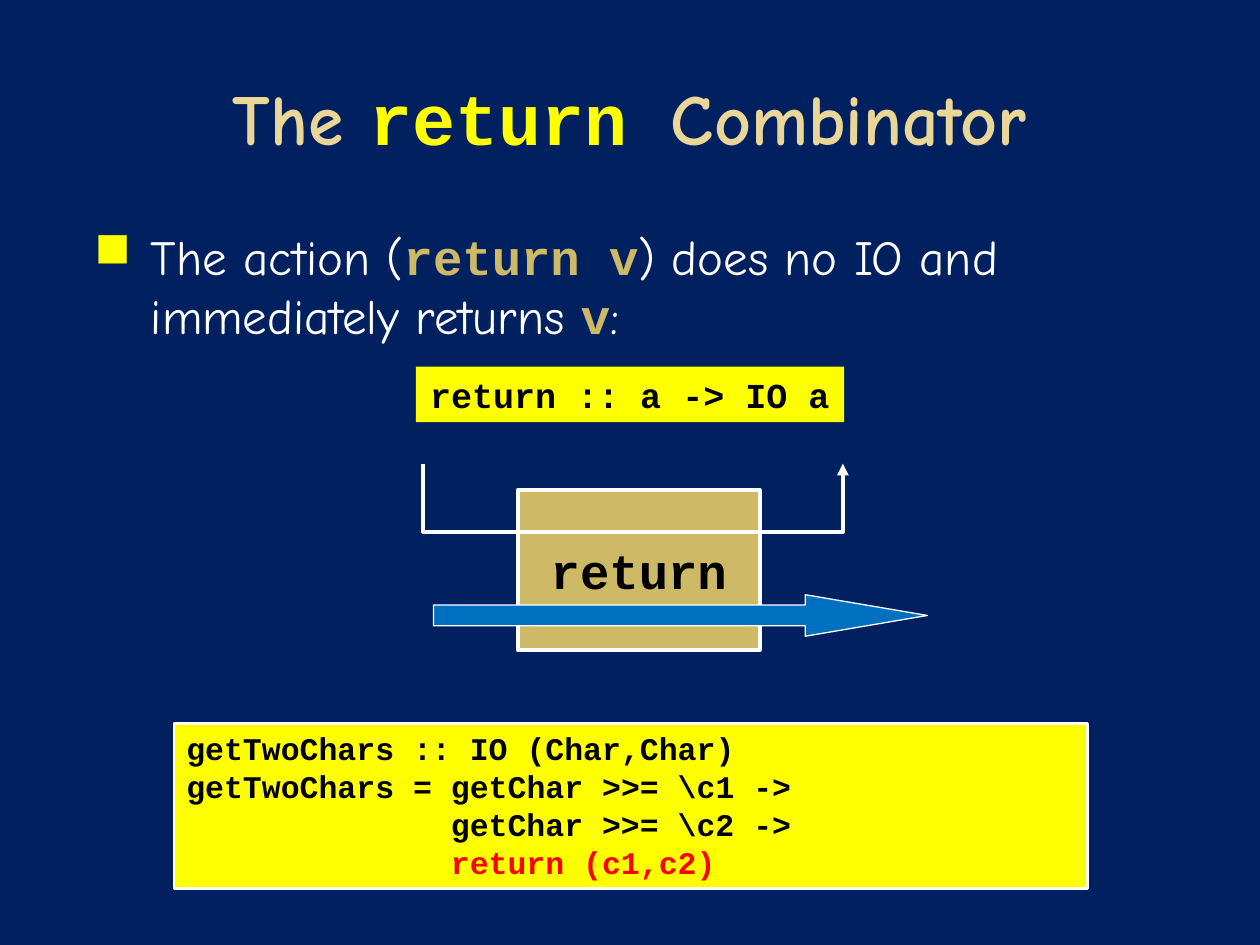
from dataclasses import dataclass
from typing import Optional

from lxml.etree import SubElement
from pptx import Presentation
from pptx.dml.color import RGBColor
from pptx.enum.shapes import MSO_SHAPE
from pptx.enum.text import MSO_ANCHOR, PP_ALIGN
from pptx.oxml.ns import qn
from pptx.util import Inches, Pt

RECTANGLE = MSO_SHAPE.RECTANGLE
RIGHT_ARROW = MSO_SHAPE.RIGHT_ARROW
TOP, MIDDLE = MSO_ANCHOR.TOP, MSO_ANCHOR.MIDDLE
LEFT, CENTER = PP_ALIGN.LEFT, PP_ALIGN.CENTER

NAVY = RGBColor(0x00, 0x20, 0x60)
CREAM = RGBColor(0xEA, 0xD6, 0x96)
GOLD = RGBColor(0xCE, 0xB9, 0x66)
YELLOW = RGBColor(0xFF, 0xFF, 0x00)
WHITE = RGBColor(0xFF, 0xFF, 0xFF)
BLACK = RGBColor(0x00, 0x00, 0x00)
RED = RGBColor(0xFF, 0x00, 0x00)
BLUE = RGBColor(0x00, 0x70, 0xC0)

PROSE, CODE = "Comic Neue", "Courier New"
COLUMNS, ROWS = 100, 75
CELL = Inches(0.1)
CODE_INDENT = 21


@dataclass(frozen=True)
class Box:
    left: float
    top: float
    width: float
    height: float

    def lengths(self) -> list[int]:
        return [cells(n) for n in (self.left, self.top, self.width, self.height)]


@dataclass(frozen=True)
class Piece:
    text: str
    color: RGBColor
    font: str = CODE
    bold: bool = True


@dataclass(frozen=True)
class Panel:
    box: Box
    fill: RGBColor
    line_width: float = 0
    kind: int = RECTANGLE


@dataclass(frozen=True)
class CodeLine:
    piece: Piece
    indent: float = 0


def cells(count: float) -> int:
    return round(count * CELL)


def add_pieces(paragraph, pieces: list[Piece], size: float, alignment=LEFT) -> None:
    paragraph.alignment = alignment
    for piece in pieces:
        run = paragraph.add_run()
        run.text = piece.text
        run.font.name = piece.font
        run.font.size = Pt(size)
        run.font.bold = piece.bold
        run.font.color.rgb = piece.color


def set_indent(paragraph, margin: float, hanging: float = 0):
    properties = paragraph._p.get_or_add_pPr()
    properties.set("marL", str(cells(margin)))
    properties.set("indent", str(-cells(hanging)))
    return properties


def add_bullet(paragraph, symbol: str, color: RGBColor) -> None:
    properties = set_indent(paragraph, 6, 4.5)
    bullet_color = SubElement(properties, qn("a:buClr"))
    SubElement(bullet_color, qn("a:srgbClr")).set("val", str(color))
    SubElement(properties, qn("a:buChar")).set("char", symbol)


def add_text_box(slide, box: Box, pieces: list[Piece], size: float, anchor, alignment):
    frame = slide.shapes.add_textbox(*box.lengths()).text_frame
    frame.word_wrap = True
    frame.vertical_anchor = anchor
    add_pieces(frame.paragraphs[0], pieces, size, alignment)
    return frame.paragraphs[0]


def add_panel(shapes, panel: Panel):
    shape = shapes.add_shape(panel.kind, *panel.box.lengths())
    shape.shadow.inherit = False
    shape.fill.solid()
    shape.fill.fore_color.rgb = panel.fill
    if panel.line_width:
        shape.line.color.rgb = WHITE
        shape.line.width = Pt(panel.line_width)
    else:
        shape.line.fill.background()
    return shape


def add_label(shape, text: str, size: float) -> None:
    frame = shape.text_frame
    frame.word_wrap = False
    frame.vertical_anchor = MIDDLE
    add_pieces(frame.paragraphs[0], [Piece(text, BLACK)], size, CENTER)


def add_value_path(shapes, box: Box) -> None:
    left, top, width, height = box.lengths()
    right, bottom = left + width, top + height
    builder = shapes.build_freeform(left, top)
    builder.add_line_segments(
        [(left, bottom), (right, bottom), (right, top)], close=False
    )
    shape = builder.convert_to_shape()
    shape.shadow.inherit = False
    shape.fill.background()
    shape.line.color.rgb = WHITE
    shape.line.width = Pt(2.25)
    SubElement(shape.line._get_or_add_ln(), qn("a:tailEnd")).set("type", "triangle")


def add_diagram(slide) -> None:
    shapes = slide.shapes.add_group_shape().shapes
    action = add_panel(shapes, Panel(Box(41.1, 38.9, 19.2, 12.7), GOLD, 2.25))
    add_label(action, "return", 28)
    arrow = add_panel(shapes, Panel(Box(34.4, 47.2, 39.2, 3.3), BLUE, 0.75, RIGHT_ARROW))
    arrow.adjustments[0] = 0.5
    arrow.adjustments[1] = 2.94
    add_value_path(shapes, Box(33.6, 36.8, 33.3, 5.4))


def add_code(slide, panel: Panel, lines: list[CodeLine]) -> None:
    frame = add_panel(slide.shapes, panel).text_frame
    frame.word_wrap = True
    frame.vertical_anchor = TOP
    for number, line in enumerate(lines):
        paragraph = frame.add_paragraph() if number else frame.paragraphs[0]
        add_pieces(paragraph, [line.piece], 18)
        set_indent(paragraph, line.indent)


def main(output: Optional[str] = None) -> None:
    presentation = Presentation()
    presentation.slide_width = COLUMNS * CELL
    presentation.slide_height = ROWS * CELL
    slide = presentation.slides.add_slide(presentation.slide_layouts[6])
    slide.background.fill.solid()
    slide.background.fill.fore_color.rgb = NAVY

    title = [
        Piece("The ", CREAM, PROSE),
        Piece("return ", YELLOW),
        Piece("Combinator", CREAM, PROSE),
    ]
    add_text_box(slide, Box(5, 3, 90, 12.5), title, 41, MIDDLE, CENTER)
    explanation = [
        Piece("The action (", WHITE, PROSE, False),
        Piece("return v", GOLD),
        Piece(") does no IO and immediately returns ", WHITE, PROSE, False),
        Piece("v", GOLD),
        Piece(":", WHITE, PROSE, False),
    ]
    paragraph = add_text_box(slide, Box(5, 17.5, 90, 51.5), explanation, 28, TOP, LEFT)
    paragraph.space_before = Pt(18)
    add_bullet(paragraph, "■", YELLOW)

    signature = add_panel(slide.shapes, Panel(Box(33, 29.1, 34, 4.4), YELLOW))
    add_label(signature, "return :: a -> IO a", 20)
    add_diagram(slide)
    add_code(slide, Panel(Box(13.8, 57.4, 72.5, 13.1), YELLOW, 1.5), [
        CodeLine(Piece("getTwoChars :: IO (Char,Char)", BLACK)),
        CodeLine(Piece("getTwoChars = getChar >>= \\c1 ->", BLACK)),
        CodeLine(Piece("getChar >>= \\c2 ->", BLACK), CODE_INDENT),
        CodeLine(Piece("return (c1,c2)", RED), CODE_INDENT),
    ])
    presentation.save("out.pptx")


if __name__ == "__main__":
    main()
